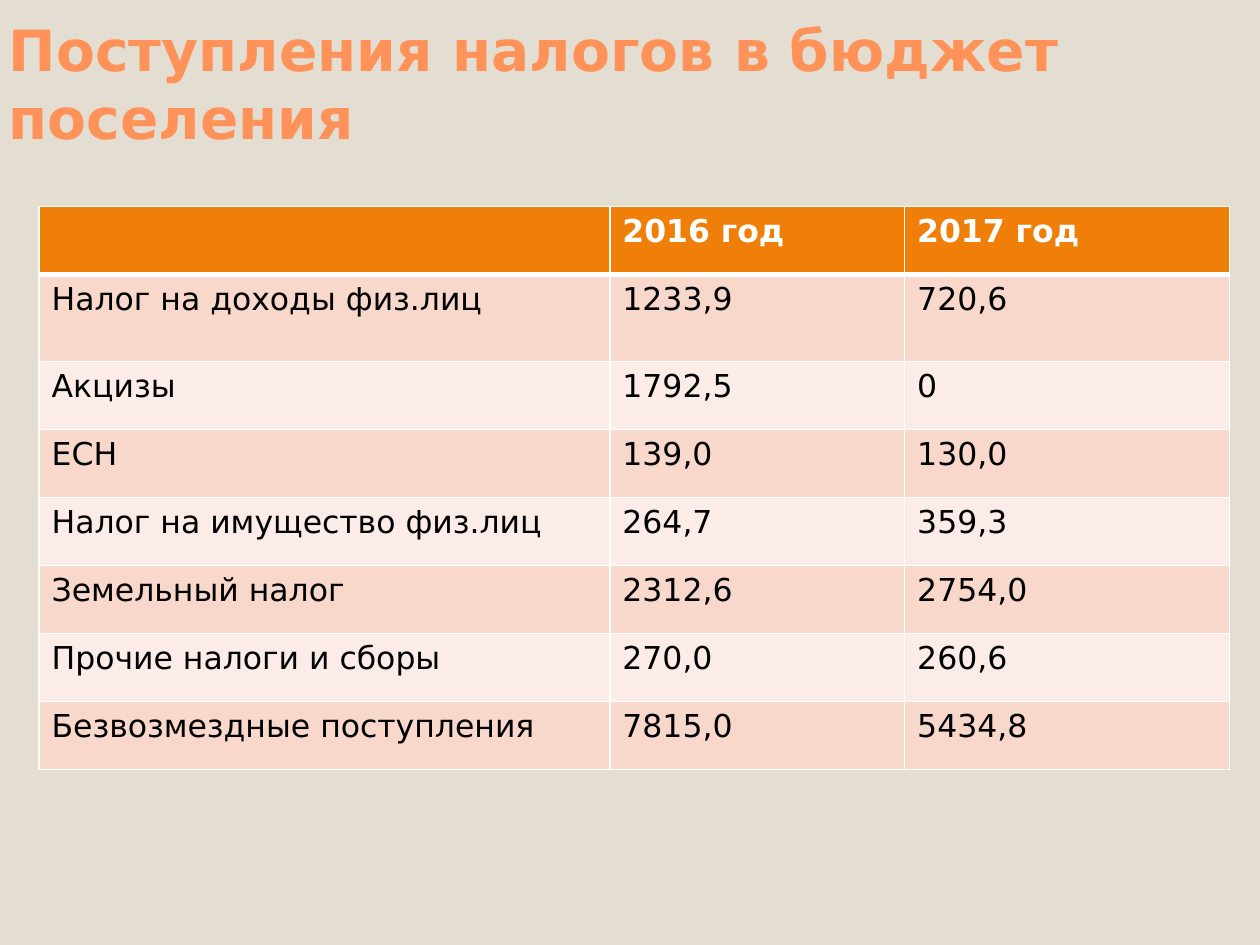
from lxml import etree
from pptx import Presentation
from pptx.dml.color import RGBColor
from pptx.enum.text import MSO_ANCHOR
from pptx.oxml.ns import qn
from pptx.util import Inches, Pt

BOTTOM = MSO_ANCHOR.BOTTOM
FONT = "DejaVu Sans"
BACKGROUND, TITLE_COLOR = "E3DED1", "FF9258"
HEADER_FILL, BANDS = "F07F09", ("F9D8CC", "FCECE7")
WHITE, BLACK = "FFFFFF", "000000"

COLUMN_WIDTHS = (4.53, 2.34, 2.58)
ROW_HEIGHT, FIRST_TAX_HEIGHT = 0.54, 0.69
TAXES = [
    ("", "2016 год", "2017 год"),
    ("Налог на доходы физ.лиц", "1233,9", "720,6"),
    ("Акцизы", "1792,5", "0"),
    ("ЕСН", "139,0", "130,0"),
    ("Налог на имущество физ.лиц", "264,7", "359,3"),
    ("Земельный налог", "2312,6", "2754,0"),
    ("Прочие налоги и сборы", "270,0", "260,6"),
    ("Безвозмездные поступления", "7815,0", "5434,8"),
]


def rgb(color):
    return RGBColor.from_string(color)


def write(frame, text, size, color, bold):
    frame.text = text
    font = frame.paragraphs[0].font
    for run in frame.paragraphs[0].runs:
        font = run.font
    font.name, font.size, font.bold = FONT, Pt(size), bold
    font.color.rgb = rgb(color)


def set_borders(cell, widths):
    """Draw white borders; widths maps lnL, lnR, lnT, lnB to points."""
    properties = cell._tc.get_or_add_tcPr()
    for position, (side, width) in enumerate(widths.items()):
        line = etree.Element(qn(f"a:{side}"), w=str(Pt(width)))
        fill = etree.SubElement(line, qn("a:solidFill"))
        etree.SubElement(fill, qn("a:srgbClr"), val=WHITE)
        # Borders precede the cell fill
        properties.insert(position, line)


def add_title(slide, left, top, width, height):
    title = slide.shapes.add_textbox(left, top, width, height)
    frame = title.text_frame
    frame.word_wrap = True
    frame.vertical_anchor = BOTTOM
    frame.margin_left = Inches(0.07)
    write(frame, "Поступления налогов в бюджет поселения", 32.4, TITLE_COLOR, True)


def add_tax_table(slide, left, top, width, height):
    table = slide.shapes.add_table(
        len(TAXES), len(COLUMN_WIDTHS), left, top, width, height).table
    for column, column_width in zip(table.columns, COLUMN_WIDTHS):
        column.width = Inches(column_width)

    for r, values in enumerate(TAXES):
        header = r == 0
        table.rows[r].height = Inches(FIRST_TAX_HEIGHT if r == 1 else ROW_HEIGHT)
        for c, value in enumerate(values):
            cell = table.cell(r, c)
            write(cell.text_frame, value, 18, WHITE if header else BLACK, header)
            cell.fill.solid()
            cell.fill.fore_color.rgb = rgb(HEADER_FILL if header else BANDS[(r - 1) % 2])
            # A thick rule separates the header from the taxes
            set_borders(cell, {"lnL": 1, "lnR": 1,
                               "lnT": 3 if r == 1 else 1,
                               "lnB": 3 if header else 1})


def main():
    presentation = Presentation()
    presentation.slide_width, presentation.slide_height = Inches(10), Inches(7.5)
    slide = presentation.slides.add_slide(presentation.slide_layouts[6])
    slide.background.fill.solid()
    slide.background.fill.fore_color.rgb = rgb(BACKGROUND)

    add_title(slide, Inches(0), Inches(0.25), Inches(9.77), Inches(1))
    add_tax_table(slide, Inches(0.31), Inches(1.64), Inches(9.45), Inches(4.46))
    presentation.save("out.pptx")


if __name__ == "__main__":
    main()
